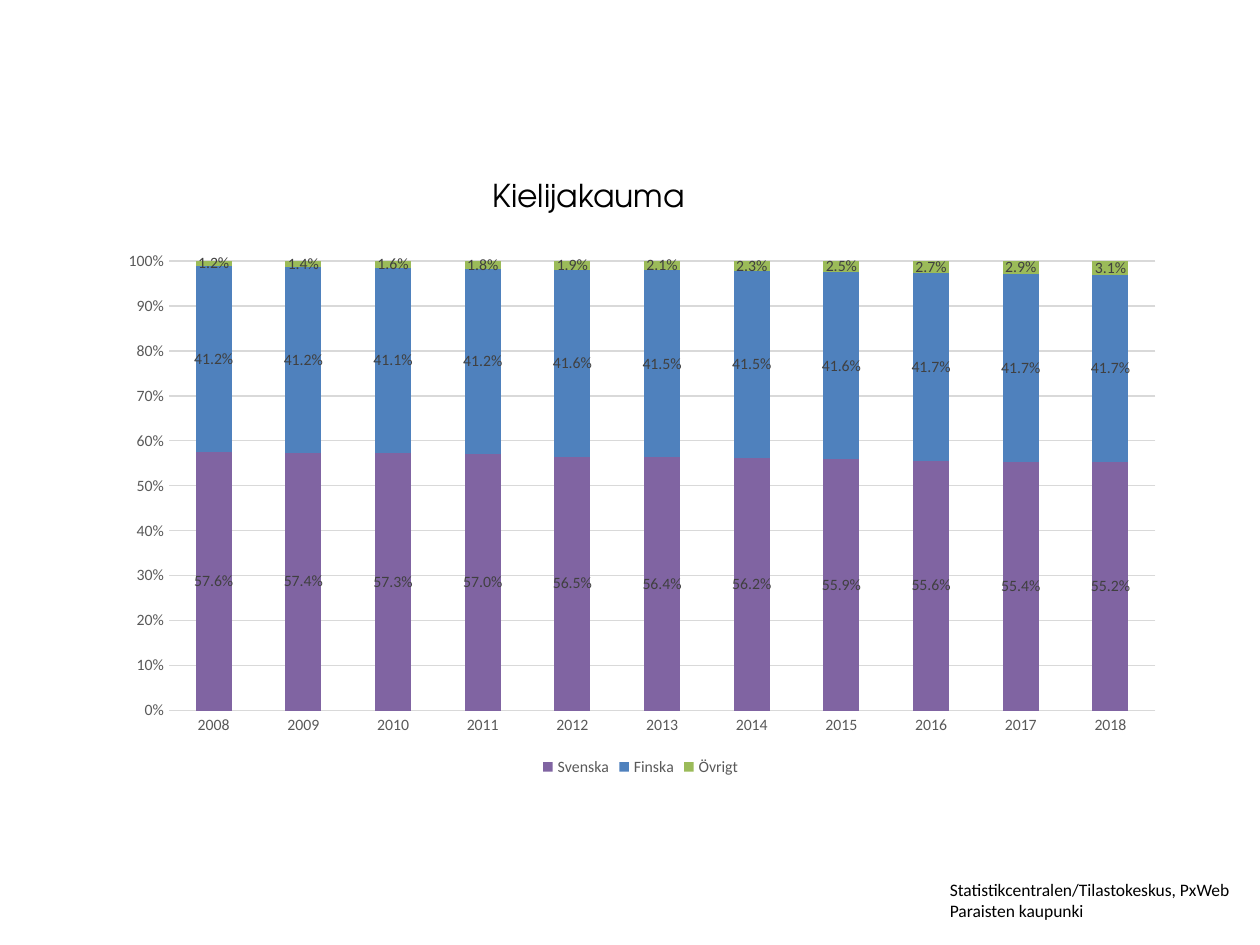
import pptx
import pptx.chart.data
import pptx.dml.color
import pptx.enum.chart
import pptx.oxml
import pptx.util
from pptx.util import Inches, Pt

YEARS = [str(year) for year in range(2008, 2019)]
# name, colour, share of each year in percent
LANGUAGES = [
    ("Svenska", "8064A2", [57.6, 57.4, 57.3, 57.0, 56.5, 56.4, 56.2, 55.9, 55.6, 55.4, 55.2]),
    ("Finska", "4F81BD", [41.2, 41.2, 41.1, 41.2, 41.6, 41.5, 41.5, 41.6, 41.7, 41.7, 41.7]),
    ("Övrigt", "9BBB59", [1.2, 1.4, 1.6, 1.8, 1.9, 2.1, 2.3, 2.5, 2.7, 2.9, 3.1]),
]
TITLE = "Kielijakauma"
SOURCE = "Statistikcentralen/Tilastokeskus, PxWeb\nParaisten kaupunki"
GRID, AXIS_TEXT, LABEL_TEXT, BLACK = "D9D9D9", "595959", "404040", "000000"
PLOT_AREA = {"x": 0.06, "y": 0.04, "w": 0.92, "h": 0.83}  # fractions of the chart


def rgb(value):
    return pptx.dml.color.RGBColor.from_string(value)


def style_font(font, size, color, name="Calibri"):
    font.size = Pt(size)
    font.name = name
    font.color.rgb = rgb(color)


def style_line(line, color=GRID, width=0.75):
    line.color.rgb = rgb(color)
    line.width = Pt(width)


def add_text(slide, text, left, top, width, height, size, font="Calibri", color=BLACK):
    box = slide.shapes.add_textbox(Inches(left), Inches(top), Inches(width), Inches(height))
    box.text_frame.word_wrap = True
    paragraph = box.text_frame.paragraphs[0]
    paragraph.text = text
    for run in paragraph.runs:
        style_font(run.font, size, color, font)


def place_plot_area(chart):
    """Fix the inner plot rectangle, which python-pptx cannot set itself."""
    plot_area = chart.plots[0]._element.getparent()
    for layout in plot_area.findall(pptx.oxml.ns.qn("c:layout")):
        plot_area.remove(layout)
    places = "".join(f'<c:{key} val="{value}"/>' for key, value in PLOT_AREA.items())
    plot_area.insert(0, pptx.oxml.parse_xml(
        f'<c:layout {pptx.oxml.ns.nsdecls("c")}><c:manualLayout>'
        '<c:layoutTarget val="inner"/><c:xMode val="edge"/><c:yMode val="edge"/>'
        f"{places}</c:manualLayout></c:layout>"))


def add_language_chart(slide):
    data = pptx.chart.data.CategoryChartData(number_format="0.0%")
    data.categories = YEARS
    for name, _, shares in LANGUAGES:
        data.add_series(name, [round(share / 100, 3) for share in shares])
    chart = slide.shapes.add_chart(
        pptx.enum.chart.XL_CHART_TYPE.COLUMN_STACKED_100,
        Inches(0.83), Inches(1.9), Inches(8.51), Inches(4.3), data).chart
    chart.has_title = False
    style_font(chart.font, 10, BLACK)

    plot = chart.plots[0]
    plot.gap_width = 150
    plot.overlap = 100
    plot.vary_by_categories = False
    for series, (_, color, _) in zip(plot.series, LANGUAGES):
        series.format.fill.solid()
        series.format.fill.fore_color.rgb = rgb(color)
        labels = series.data_labels
        labels.show_value = True
        labels.position = pptx.enum.chart.XL_LABEL_POSITION.CENTER
        labels.number_format = "0.0%"
        labels.number_format_is_linked = False
        style_font(labels.font, 9, LABEL_TEXT)

    for axis in (chart.category_axis, chart.value_axis):
        axis.major_tick_mark = axis.minor_tick_mark = pptx.enum.chart.XL_TICK_MARK.NONE
        style_font(axis.tick_labels.font, 9, AXIS_TEXT)
    style_line(chart.category_axis.format.line)
    value_axis = chart.value_axis
    value_axis.format.line.fill.background()
    value_axis.minimum_scale, value_axis.maximum_scale = 0, 1
    value_axis.major_unit = 0.1
    value_axis.tick_labels.number_format = "0%"
    value_axis.tick_labels.number_format_is_linked = False
    style_line(value_axis.major_gridlines.format.line)

    chart.has_legend = True
    chart.legend.position = pptx.enum.chart.XL_LEGEND_POSITION.BOTTOM
    chart.legend.include_in_layout = False
    style_font(chart.legend.font, 9, AXIS_TEXT)
    place_plot_area(chart)


def main():
    presentation = pptx.Presentation()
    presentation.slide_width, presentation.slide_height = Inches(10), Inches(7.5)
    slide = presentation.slides.add_slide(presentation.slide_layouts[6])
    add_text(slide, SOURCE, 7.44, 6.93, 2.49, 0.44, size=10)
    add_language_chart(slide)
    add_text(slide, TITLE, 3.81, 1.35, 2.13, 0.4, size=18, font="TeX Gyre Adventor")
    presentation.save("out.pptx")


if __name__ == "__main__":
    main()
